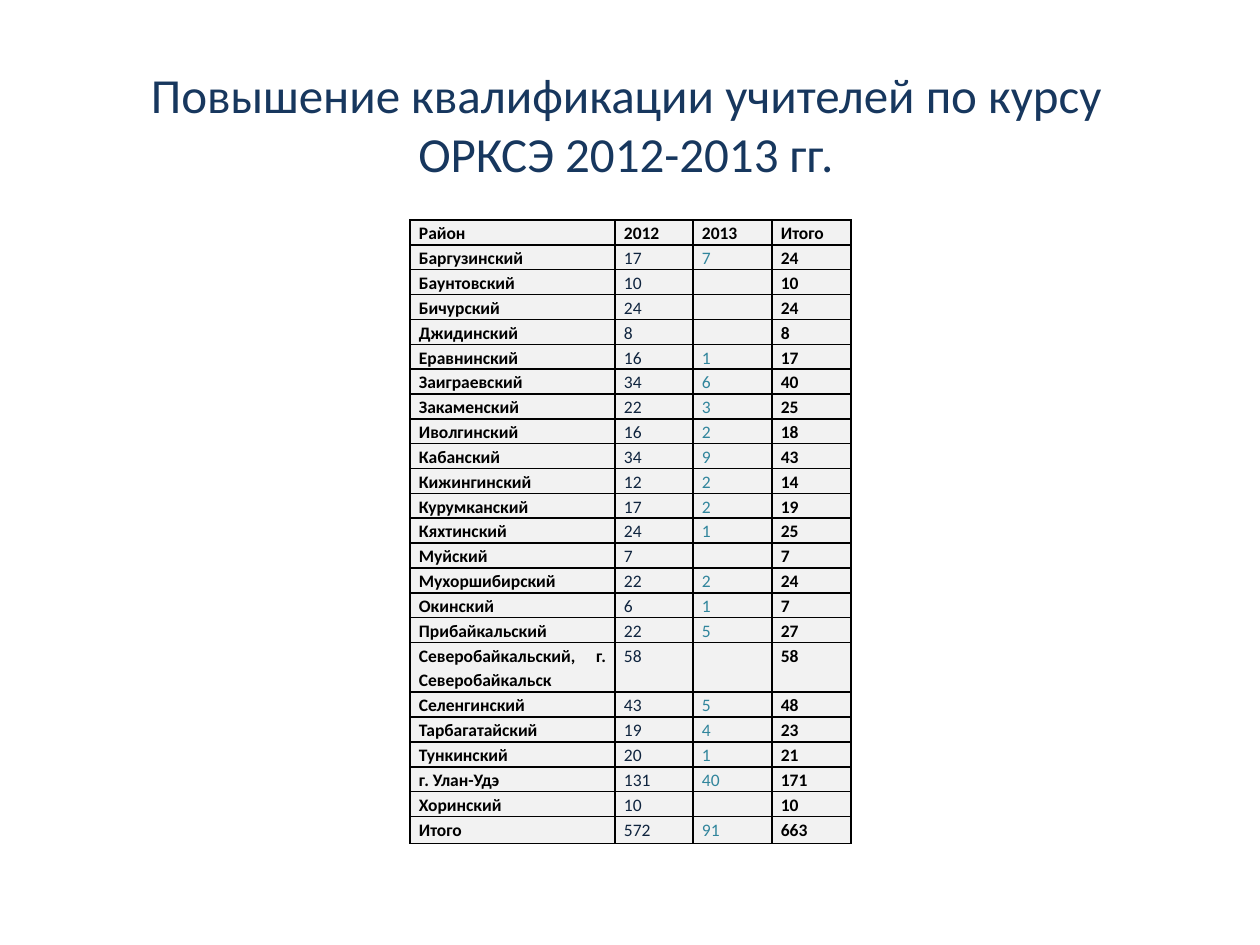
"""Build a slide with a table of teacher training by district."""
from lxml.etree import SubElement as Sub
from pptx import Presentation as Deck
from pptx.dml.color import RGBColor as RGB
from pptx.enum.text import MSO_ANCHOR as Anchor, PP_ALIGN as Align
from pptx.oxml.ns import qn
from pptx.util import Pt

PX = 914400 / 126
HUES = {"title": "17375E", "black": "000000", "navy": "0F243E",
        "teal": "31859C", "fill": "F2F2F2"}
ROWS = [
    ("Район", "2012", "2013", "Итого"),
    ("Баргузинский", "17", "7", "24"),
    ("Баунтовский", "10", "", "10"),
    ("Бичурский", "24", "", "24"),
    ("Джидинский", "8", "", "8"),
    ("Еравнинский", "16", "1", "17"),
    ("Заиграевский", "34", "6", "40"),
    ("Закаменский", "22", "3", "25"),
    ("Иволгинский", "16", "2", "18"),
    ("Кабанский", "34", "9", "43"),
    ("Кижингинский", "12", "2", "14"),
    ("Курумканский", "17", "2", "19"),
    ("Кяхтинский", "24", "1", "25"),
    ("Муйский", "7", "", "7"),
    ("Мухоршибирский", "22", "2", "24"),
    ("Окинский", "6", "1", "7"),
    ("Прибайкальский", "22", "5", "27"),
    ("Северобайкальский, г. Северобайкальск", "58", "", "58"),
    ("Селенгинский", "43", "5", "48"),
    ("Тарбагатайский", "19", "4", "23"),
    ("Тункинский", "20", "1", "21"),
    ("г. Улан-Удэ", "131", "40", "171"),
    ("Хоринский", "10", "", "10"),
    ("Итого", "572", "91", "663"),
]
WIDTHS = (205, 78, 79, 79)
INKS = ("black", "navy", "teal", "black")
LINE = 597 / 24
TALL, LAST = 17, len(ROWS) - 1


def px(num):
    return round(num * PX)


def write(frame, text, size=10, hue="black", bold=False, align=Align.LEFT, lead=1.0):
    para = frame.paragraphs[0]
    para.alignment = align
    para.line_spacing = lead
    if not text:
        Sub(para._p, qn("a:endParaRPr"), sz=str(size * 100))
        return
    run = para.add_run()
    run.text = text
    font = run.font
    font.name, font.size, font.bold = "Calibri", Pt(size), bold
    font.color.rgb = RGB.from_string(HUES[hue])


deck = Deck()
deck.slide_width, deck.slide_height = px(1260), px(945)
slide = deck.slides.add_slide(deck.slide_layouts[5])

title = slide.shapes.title
title.left, title.top, title.width, title.height = map(px, (105, 58, 1042, 131))
title.text_frame.vertical_anchor = Anchor.MIDDLE
write(title.text_frame, "Повышение квалификации учителей по курсу ОРКСЭ 2012-2013 гг.",
      size=28, hue="title", align=Align.CENTER)

table = slide.shapes.add_table(len(ROWS), len(WIDTHS), px(410), px(220),
                               px(sum(WIDTHS)), px(624)).table
for col, wide in zip(table.columns, WIDTHS):
    col.width = px(wide)

for i, row in enumerate(ROWS):
    table.rows[i].height = px({TALL: 2 * LINE, LAST: 27}.get(i, LINE))
    for j, text in enumerate(row):
        cell = table.cell(i, j)
        cell.margin_left = cell.margin_right = px(9)
        cell.margin_top = cell.margin_bottom = 0
        cell.fill.solid()
        cell.fill.fore_color.rgb = RGB.from_string(HUES["fill"])
        hue = INKS[j] if i else "black"
        align = Align.JUSTIFY if j == 0 else Align.LEFT
        write(cell.text_frame, text, hue=hue, bold=hue == "black",
              align=align, lead=1.15)
        props = cell._tc.get_or_add_tcPr()
        for k, side in enumerate("LRTB"):
            edge = Sub(props, qn("a:ln" + side), w=str(Pt(1)))
            Sub(Sub(edge, qn("a:solidFill")), qn("a:srgbClr"), val=HUES["black"])
            props.insert(k, edge)

deck.save("out.pptx")
